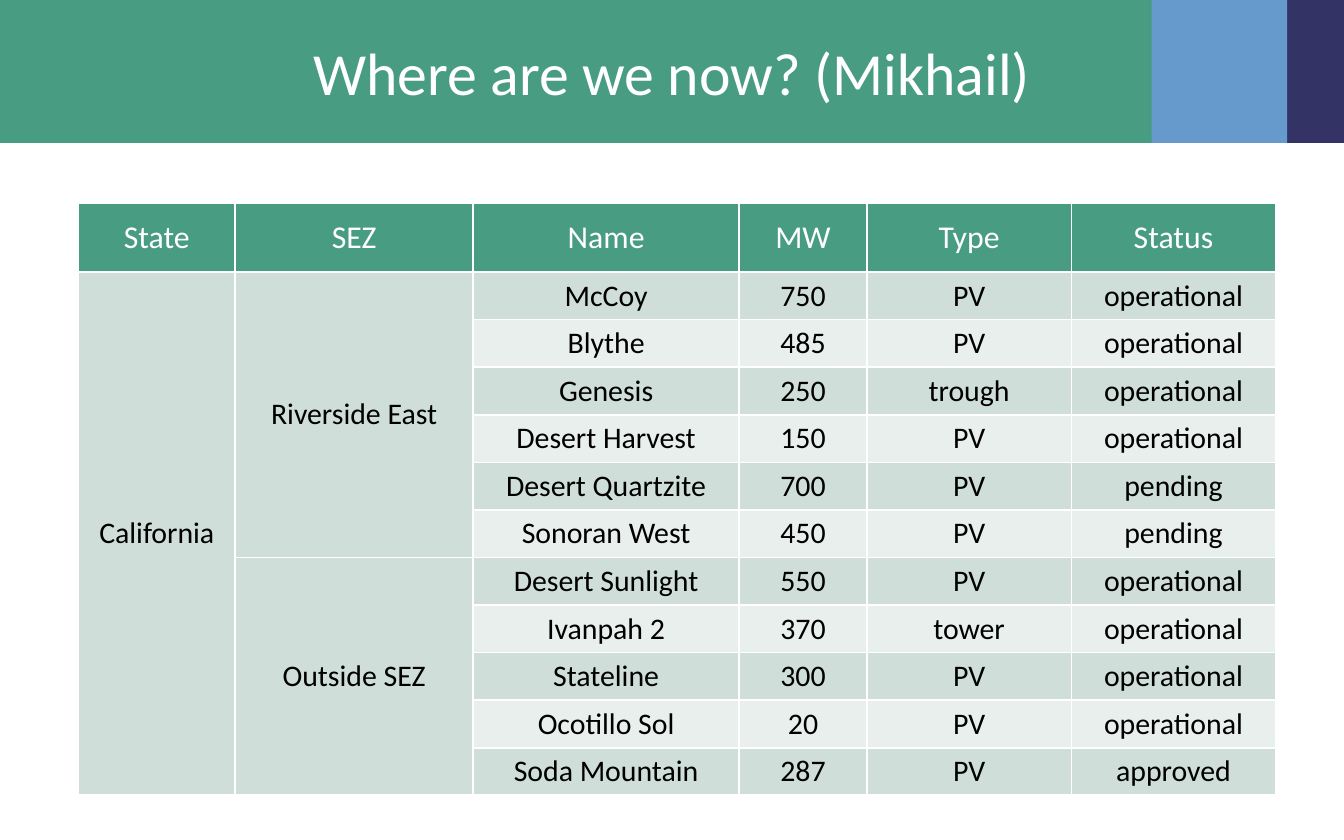
from dataclasses import dataclass

from lxml import etree
from pptx import Presentation
from pptx.dml.color import RGBColor
from pptx.enum import shapes, text
from pptx.oxml import ns
from pptx.util import Pt


@dataclass(frozen=True)
class Theme:
    font: str = "Calibri"
    green: str = "489C81"
    blue: str = "6699CC"
    navy: str = "333366"
    band_dark: str = "CFDED8"
    band_light: str = "E9EFED"
    white: str = "FFFFFF"
    black: str = "000000"
    title_size: float = 32
    header_size: float = 17
    body_size: float = 16
    border: float = 1


THEME = Theme()

HEADERS = ["State", "SEZ", "Name", "MW", "Type", "Status"]
COLUMN_WIDTHS = [84, 127.5, 142.5, 68.5, 109.5, 109.5]
STATE = "California"
PROJECTS_BY_ZONE = {
    "Riverside East": [
        ("McCoy", "750", "PV", "operational"),
        ("Blythe", "485", "PV", "operational"),
        ("Genesis", "250", "trough", "operational"),
        ("Desert Harvest", "150", "PV", "operational"),
        ("Desert Quartzite", "700", "PV", "pending"),
        ("Sonoran West", "450", "PV", "pending"),
    ],
    "Outside SEZ": [
        ("Desert Sunlight", "550", "PV", "operational"),
        ("Ivanpah 2", "370", "tower", "operational"),
        ("Stateline", "300", "PV", "operational"),
        ("Ocotillo Sol", "20", "PV", "operational"),
        ("Soda Mountain", "287", "PV", "approved"),
    ],
}


def color(value):
    return RGBColor.from_string(value)


def style_paragraph(para, size, ink):
    para.alignment = text.PP_ALIGN.CENTER
    para.font.name = THEME.font
    para.font.size = Pt(size)
    para.font.bold = False
    para.font.color.rgb = color(ink)


def add_banner(page, left, top, width, height):
    # Colour blocks, from back to front; the green one overlaps its neighbour
    blocks = [(679, width - 679, THEME.navy), (614, 75.5, THEME.blue), (0, 617, THEME.green)]
    for offset, block_width, fill in blocks:
        block = page.shapes.add_shape(
            shapes.MSO_SHAPE.RECTANGLE,
            Pt(left + offset), Pt(top), Pt(block_width), Pt(height))
        block.shadow.inherit = False
        block.fill.solid()
        block.fill.fore_color.rgb = color(fill)
        block.line.fill.background()

    # Title
    margin = 36
    box = page.shapes.add_textbox(
        Pt(left + margin), Pt(top + 8.5), Pt(width - 2 * margin), Pt(60))
    frame = box.text_frame
    frame.word_wrap = True
    frame.vertical_anchor = text.MSO_ANCHOR.MIDDLE
    frame.text = "Where are we now? (Mikhail)"
    style_paragraph(frame.paragraphs[0], THEME.title_size, THEME.white)


def add_borders(cell):
    properties = cell._tc.get_or_add_tcPr()
    for side in ("a:lnL", "a:lnR", "a:lnT", "a:lnB"):
        line = etree.SubElement(properties, ns.qn(side), w=str(int(Pt(THEME.border))))
        fill = etree.SubElement(line, ns.qn("a:solidFill"))
        etree.SubElement(fill, ns.qn("a:srgbClr"), val=THEME.white)


def style_cell(cell, fill, size, ink):
    add_borders(cell)
    cell.fill.solid()
    cell.fill.fore_color.rgb = color(fill)
    cell.vertical_anchor = text.MSO_ANCHOR.MIDDLE
    cell.margin_left = cell.margin_right = Pt(7.2)
    cell.margin_top = cell.margin_bottom = Pt(2.9)
    style_paragraph(cell.text_frame.paragraphs[0], size, ink)


def add_project_table(page, left, top, width, height):
    project_count = sum(len(projects) for projects in PROJECTS_BY_ZONE.values())
    header_height = 37
    row_height = (height - header_height) / project_count
    table = page.shapes.add_table(
        project_count + 1, len(HEADERS), Pt(left), Pt(top), Pt(width), Pt(height)).table
    table.horz_banding = False
    for column, column_width in zip(table.columns, COLUMN_WIDTHS):
        column.width = Pt(column_width)
    for index, row in enumerate(table.rows):
        row.height = Pt(row_height if index else header_height)

    # Wording, with state and zone cells spanning their projects
    for column, header in enumerate(HEADERS):
        table.cell(0, column).text = header
    table.cell(1, 0).text = STATE
    table.cell(1, 0).merge(table.cell(project_count, 0))
    first = 1
    for zone, projects in PROJECTS_BY_ZONE.items():
        table.cell(first, 1).text = zone
        table.cell(first, 1).merge(table.cell(first + len(projects) - 1, 1))
        for row, project in enumerate(projects, first):
            for column, value in enumerate(project, 2):
                table.cell(row, column).text = value
        first += len(projects)

    # Header, spanning cells and alternating bands
    for row in range(project_count + 1):
        for column in range(len(HEADERS)):
            cell = table.cell(row, column)
            if row == 0:
                style_cell(cell, THEME.green, THEME.header_size, THEME.white)
            else:
                dark = column < 2 or row % 2
                fill = THEME.band_dark if dark else THEME.band_light
                style_cell(cell, fill, THEME.body_size, THEME.black)


def main():
    deck = Presentation()
    deck.slide_width, deck.slide_height = Pt(720), Pt(450)
    page = deck.slides.add_slide(deck.slide_layouts[6])
    add_banner(page, 0, 0, 720, 76.5)
    add_project_table(page, 42, 108.75, sum(COLUMN_WIDTHS), 317.5)
    deck.save("out.pptx")


if __name__ == "__main__":
    main()
